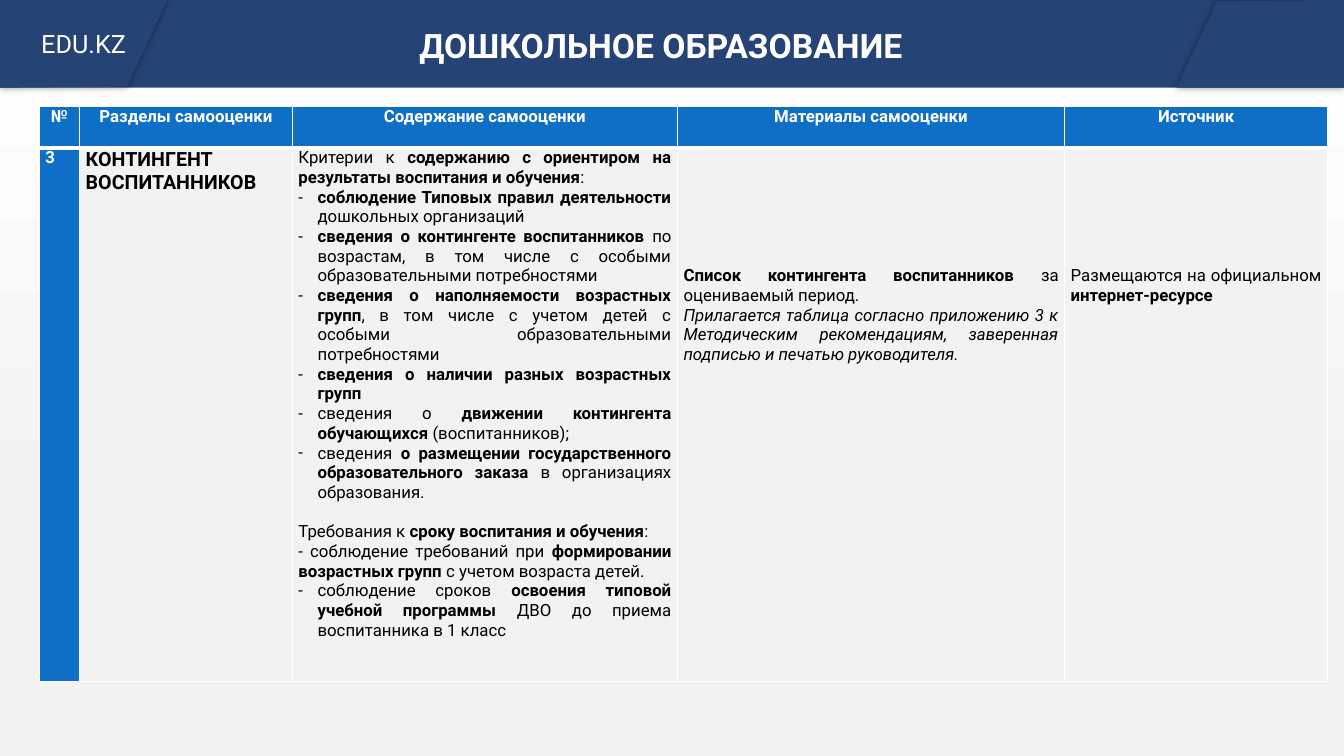
from lxml import etree
from pptx import Presentation
from pptx import util as u
from pptx.dml import color
from pptx.enum import text
from pptx.enum import shapes as kinds
from pptx.oxml import ns

FONT = "Roboto"
COLORS = {
    "navy": "254375",
    "blue": "0F6FC6",
    "gray": "F2F2F2",
    "white": "FFFFFF",
    "black": "000000",
}
WIDTH, HEIGHT = 13.33, 7.5
BANNER_HEIGHT = 0.87

COLUMNS = [0.4, 2.11, 3.82, 3.84, 2.61]
ROWS = [0.41, 5.29]
HEADINGS = ["№", "Разделы самооценки", "Содержание самооценки",
            "Материалы самооценки", "Источник"]

# Each paragraph is (style, text); asterisks enclose bold words
CONTENT = [
    ("plain", "Критерии к *содержанию с ориентиром на результаты воспитания и обучения*:"),
    ("bullet", "*соблюдение Типовых правил деятельности *дошкольных организаций"),
    ("bullet", "*сведения о контингенте воспитанников *по возрастам, в том числе "
               "с особыми образовательными потребностями"),
    ("bullet", "*сведения о наполняемости возрастных групп*, в том числе с учетом "
               "детей с особыми образовательными потребностями"),
    ("bullet", "*сведения о наличии разных возрастных групп*"),
    ("bullet", "сведения о *движении контингента обучающихся *(воспитанников);"),
    ("bullet", "сведения *о размещении государственного образовательного заказа *"
               "в организациях образования."),
    ("section", "Требования к *сроку воспитания и обучения*:"),
    ("plain", "- соблюдение требований при *формировании возрастных групп *"
              "с учетом возраста детей."),
    ("bullet", "соблюдение сроков *освоения типовой учебной программы* ДВО "
               "до приема воспитанника в 1 класс"),
]
MATERIALS = [
    ("plain", "*Список контингента воспитанников *за оцениваемый период."),
    ("italic", "Прилагается таблица согласно приложению 3 к Методическим "
               "рекомендациям, заверенная подписью и печатью руководителя."),
]
SOURCE = [("plain", "Размещаются на официальном *интернет-ресурсе*")]


def rgb(name):
    return color.RGBColor.from_string(COLORS[name])


def add_run(paragraph, words, size, ink, bold=False, italic=False):
    run = paragraph.add_run()
    run.text = words
    run.font.name = FONT
    run.font.size = u.Pt(size)
    run.font.bold = bold
    run.font.italic = italic
    run.font.color.rgb = rgb(ink)


def add_color(parent, name):
    return etree.SubElement(parent, ns.qn("a:srgbClr"), val=COLORS[name])


def paint(shape):
    shape.fill.solid()
    shape.fill.fore_color.rgb = rgb("navy")
    shape.line.fill.background()
    shape.shadow.inherit = False


def set_background(slide):
    fill = slide.background.fill
    fill.gradient()
    fill.gradient_angle = 270
    for stop, name, position in zip(fill.gradient_stops, ("white", "gray"), (0, 0.68)):
        stop.color.rgb = rgb(name)
        stop.position = position


def add_flag(slide, points):
    corners = [(u.Inches(x), u.Inches(y)) for x, y in points]
    builder = slide.shapes.build_freeform(*corners[0])
    builder.add_line_segments(corners[1:], close=True)
    flag = builder.convert_to_shape()
    paint(flag)
    effects = flag._element.spPr.find(ns.qn("a:effectLst"))
    shadow = etree.SubElement(effects, ns.qn("a:outerShdw"),
                              blurRad=str(u.Pt(5)), dist="0", dir="0")
    etree.SubElement(add_color(shadow, "black"), ns.qn("a:alpha"), val="40000")
    return flag


def add_banner(slide, left, top, width, height):
    band = slide.shapes.add_shape(
        kinds.MSO_SHAPE.RECTANGLE,
        u.Inches(left), u.Inches(top), u.Inches(width), u.Inches(height))
    paint(band)

    # Slanted ends: the right one is the left one turned half round
    outline = [(0, 0), (0, height), (1.26, height - 0.01), (1.66, 0)]
    site = add_flag(slide, [(left + x, top + y) for x, y in outline])
    add_flag(slide, [(left + width - x, top + height - y) for x, y in outline])
    site.text_frame.vertical_anchor = text.MSO_ANCHOR.MIDDLE
    paragraph = site.text_frame.paragraphs[0]
    paragraph.alignment = text.PP_ALIGN.CENTER
    add_run(paragraph, "EDU.KZ", 18, "white")

    # Title, brought in front of the band
    title = slide.shapes.title
    title.left, title.top = u.Inches(left + 3.22), u.Inches(top + 0.17)
    title.width, title.height = u.Inches(6.75), u.Inches(0.49)
    slide.shapes._spTree.append(title._element)
    frame = title.text_frame
    frame.auto_size = text.MSO_AUTO_SIZE.NONE
    frame.vertical_anchor = text.MSO_ANCHOR.TOP
    paragraph = frame.paragraphs[0]
    paragraph.alignment = text.PP_ALIGN.CENTER
    paragraph.line_spacing = 1.07
    add_run(paragraph, "ДОШКОЛЬНОЕ ОБРАЗОВАНИЕ ", 24, "white", bold=True)


def style_cell(cell, fill, top_line, bottom_line, top_margin=0):
    cell.margin_left = cell.margin_right = u.Inches(0.06)
    cell.margin_top, cell.margin_bottom = u.Inches(top_margin), 0
    cell.fill.solid()
    cell.fill.fore_color.rgb = rgb(fill)
    properties = cell._tc.get_or_add_tcPr()
    borders = {"lnL": 1, "lnR": 1, "lnT": top_line, "lnB": bottom_line}
    for index, (tag, points) in enumerate(borders.items()):
        line = etree.Element(ns.qn("a:" + tag), w=str(u.Pt(points)))
        add_color(etree.SubElement(line, ns.qn("a:solidFill")), "white")
        properties.insert(index, line)


def add_bullet(paragraph):
    properties = paragraph._p.get_or_add_pPr()
    indent = u.Inches(0.19)
    properties.set("marL", str(indent))
    properties.set("indent", str(-indent))
    etree.SubElement(properties, ns.qn("a:buFont"), typeface=FONT)
    etree.SubElement(properties, ns.qn("a:buChar"), char="-")


def write_paragraphs(cell, entries):
    frame = cell.text_frame
    for index, (style, words) in enumerate(entries):
        paragraph = frame.add_paragraph() if index else frame.paragraphs[0]
        paragraph.alignment = text.PP_ALIGN.JUSTIFY
        if style == "bullet":
            add_bullet(paragraph)
        elif style == "section":
            paragraph.space_before = u.Pt(14)
        for part, piece in enumerate(words.split("*")):
            if piece:
                add_run(paragraph, piece, 12, "black", part % 2 == 1, style == "italic")


def add_assessment_table(slide, left, top):
    table = slide.shapes.add_table(
        len(ROWS), len(COLUMNS), u.Inches(left), u.Inches(top),
        u.Inches(sum(COLUMNS)), u.Inches(sum(ROWS))).table
    table.horz_banding = False
    for column, width in zip(table.columns, COLUMNS):
        column.width = u.Inches(width)
    for row, height in zip(table.rows, ROWS):
        row.height = u.Inches(height)

    # Heading row
    for index, heading in enumerate(HEADINGS):
        cell = table.cell(0, index)
        style_cell(cell, "blue", 1, 3)
        paragraph = cell.text_frame.paragraphs[0]
        paragraph.alignment = text.PP_ALIGN.CENTER
        add_run(paragraph, heading, 12, "white", bold=True)

    # Section row
    number, section, content, materials, source = table.rows[1].cells
    for cell in (number, section, content):
        style_cell(cell, "blue" if cell is number else "gray", 3, 1)
    for cell in (materials, source):
        style_cell(cell, "gray", 3, 1, top_margin=1.17)
    add_run(number.text_frame.paragraphs[0], "3", 12, "white", bold=True)
    add_run(section.text_frame.paragraphs[0], "КОНТИНГЕНТ ВОСПИТАННИКОВ", 14,
            "black", bold=True)
    write_paragraphs(content, CONTENT)
    write_paragraphs(materials, MATERIALS)
    write_paragraphs(source, SOURCE)


def main():
    presentation = Presentation()
    presentation.slide_width = u.Inches(WIDTH)
    presentation.slide_height = u.Inches(HEIGHT)
    slide = presentation.slides.add_slide(presentation.slide_layouts[5])
    set_background(slide)
    add_banner(slide, 0, 0, WIDTH, BANNER_HEIGHT)
    add_assessment_table(slide, 0.39, 1.06)
    presentation.save("out.pptx")


if __name__ == "__main__":
    main()
